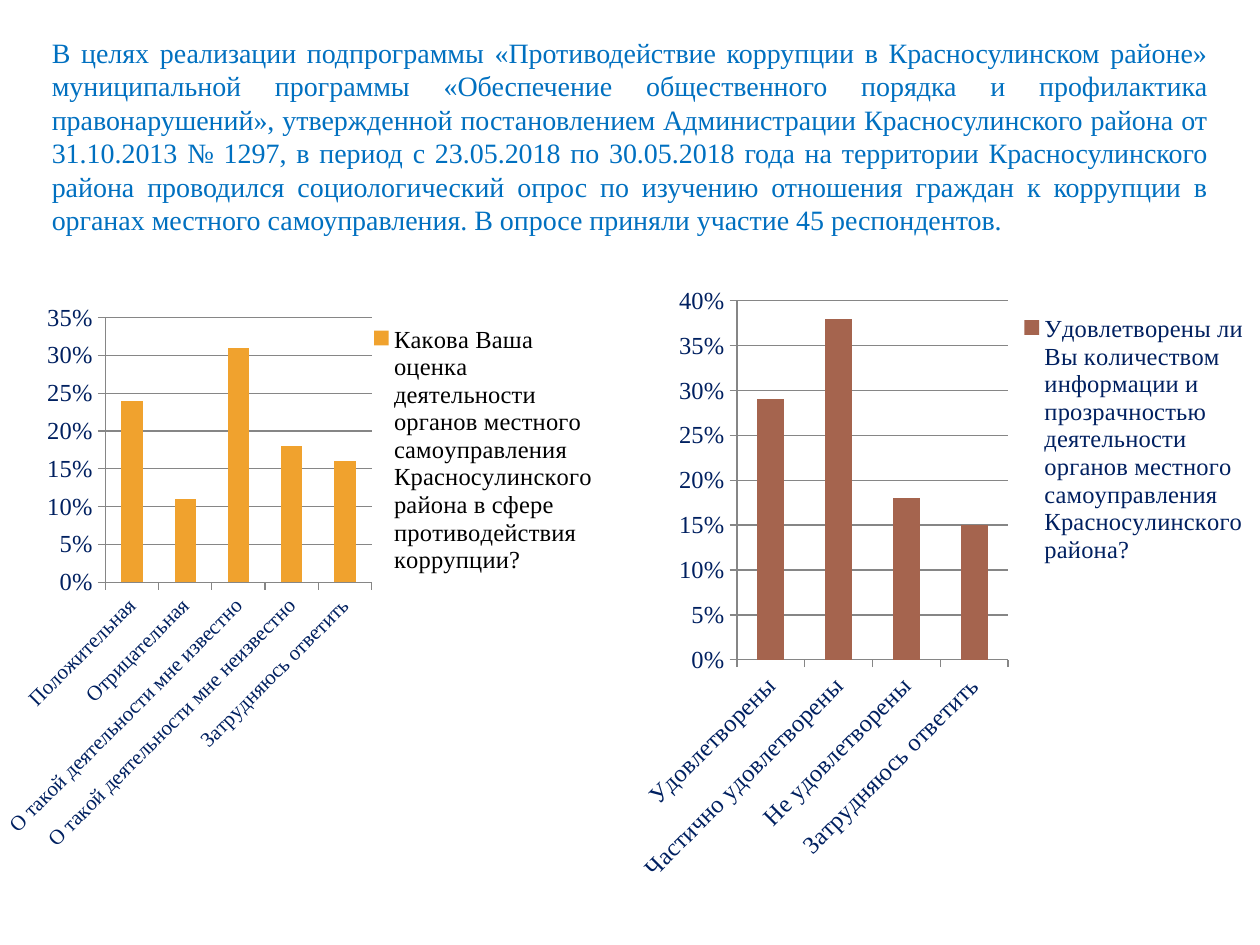
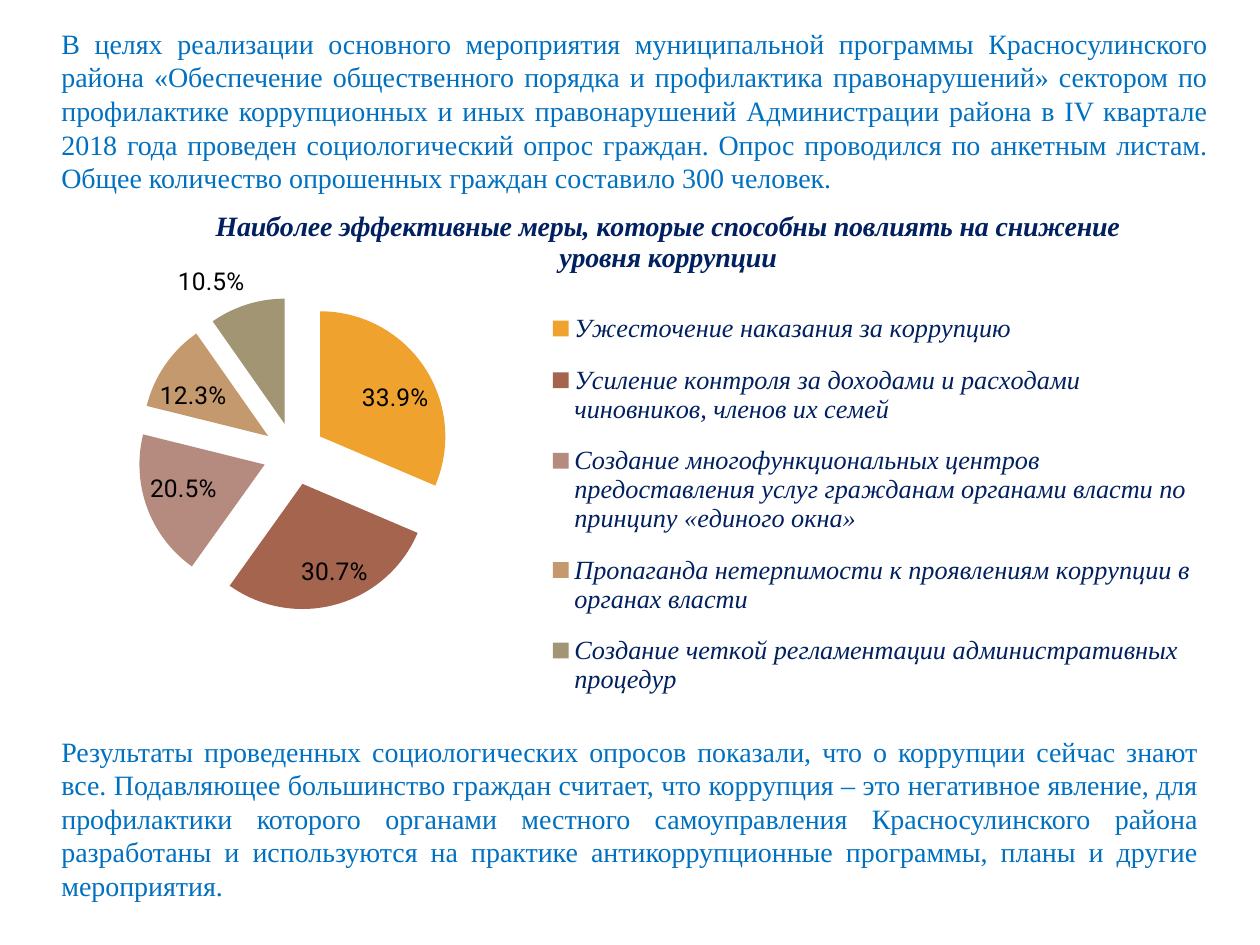
from pptx import Presentation
from pptx.chart.data import CategoryChartData
from pptx.dml.color import RGBColor
from pptx.enum import chart as ec, text as et
from pptx.oxml import parse_xml
from pptx.oxml.ns import nsdecls, qn
from pptx.util import Pt

BLUE = RGBColor(0x00, 0x70, 0xC0)
NAVY = RGBColor(0x00, 0x20, 0x60)
BLACK = RGBColor(0x00, 0x00, 0x00)
GREY = RGBColor(0x86, 0x86, 0x86)
AMBER = RGBColor(0xF0, 0xA2, 0x2E)
RUST = RGBColor(0xA5, 0x64, 0x4E)
ROSE = RGBColor(0xB5, 0x8B, 0x80)
TAN = RGBColor(0xC3, 0x99, 0x6D)
OLIVE = RGBColor(0xA1, 0x95, 0x74)
SERIF, SANS = "Times New Roman", "Roboto"

GOALS = (
    "В целях реализации подпрограммы «Противодействие коррупции в Красносулинском "
    "районе» муниципальной программы «Обеспечение общественного порядка и "
    "профилактика правонарушений», утвержденной постановлением Администрации "
    "Красносулинского района от 31.10.2013 № 1297, в период с 23.05.2018 по "
    "30.05.2018 года на территории Красносулинского района проводился "
    "социологический опрос по изучению отношения граждан к коррупции в органах "
    "местного самоуправления. В опросе приняли участие 45 респондентов.")
SURVEY = (
    "В целях реализации основного мероприятия муниципальной программы "
    "Красносулинского района «Обеспечение общественного порядка и профилактика "
    "правонарушений» сектором по профилактике коррупционных и иных правонарушений "
    "Администрации района в IV квартале 2018 года проведен социологический опрос "
    "граждан. Опрос проводился по анкетным листам. Общее количество опрошенных "
    "граждан составило 300 человек.")
RESULT = (
    "Результаты проведенных социологических опросов показали, что о коррупции "
    "сейчас знают все. Подавляющее большинство граждан считает, что коррупция – это "
    "негативное явление, для профилактики которого органами местного самоуправления "
    "Красносулинского района разработаны и используются на практике "
    "антикоррупционные программы, планы и другие мероприятия.")

RATING = (
    "Какова Ваша оценка деятельности органов местного самоуправления "
    "Красносулинского района в сфере противодействия коррупции?",
    {"Положительная": 0.24,
     "Отрицательная": 0.11,
     "О такой деятельности мне известно": 0.31,
     "О такой деятельности мне неизвестно": 0.18,
     "Затрудняюсь ответить": 0.16})
OPENNESS = (
    "Удовлетворены ли Вы количеством информации и прозрачностью деятельности "
    "органов местного самоуправления Красносулинского района?",
    {"Удовлетворены": 0.29,
     "Частично удовлетворены": 0.38,
     "Не удовлетворены": 0.18,
     "Затрудняюсь ответить": 0.15})
MEASURES = (
    "Наиболее эффективные меры, которые способны повлиять на снижение "
    "уровня коррупции",
    {"Ужесточение наказания за коррупцию": 0.339,
     "Усиление контроля за доходами и расходами чиновников, членов их семей": 0.307,
     "Создание многофункциональных центров предоставления услуг гражданам "
     "органами власти по принципу «единого окна»": 0.205,
     "Пропаганда нетерпимости к проявлениям коррупции в органах власти": 0.123,
     "Создание четкой регламентации административных процедур": 0.105})


def style(font, size, color=NAVY, name=SERIF, bold=False, italic=False):
    font.size, font.name = Pt(size), name
    font.bold, font.italic = bold, italic
    font.color.rgb = color


def fill(fmt, color):
    fmt.fill.solid()
    fmt.fill.fore_color.rgb = color


def place(node, index, spot, inner=False):
    """Set a manual layout, in shares of the chart's box."""
    for old in node.findall(qn("c:layout")):
        node.remove(old)
    parts = '<c:layoutTarget val="inner"/>' if inner else ""
    keys = ("x", "y", "w", "h")[:len(spot)]
    parts += "".join(f'<c:{k}Mode val="edge"/>' for k in keys[:2])
    parts += "".join(f'<c:{k} val="{v}"/>' for k, v in zip(keys, spot))
    node.insert(index, parse_xml(
        f'<c:layout {nsdecls("c")}><c:manualLayout>{parts}</c:manualLayout></c:layout>'))


def prose(slide, box, words):
    """Justified blue paragraph."""
    shape = slide.shapes.add_textbox(*map(Pt, box))
    frame = shape.text_frame
    frame.word_wrap = True
    frame.auto_size = et.MSO_AUTO_SIZE.SHAPE_TO_FIT_TEXT
    para = frame.paragraphs[0]
    para.alignment = et.PP_ALIGN.JUSTIFY
    run = para.add_run()
    run.text = words
    style(run.font, 16, BLUE)


def graph(slide, box, kind, poll, form, plot, key):
    """Chart with its legend, shared by columns and pie."""
    name, shares = poll
    data = CategoryChartData(number_format=form)
    data.categories = list(shares)
    data.add_series(name, list(shares.values()))
    chart = slide.shapes.add_chart(kind, *map(Pt, box), data).chart
    style(chart.font, 18, BLACK, SANS)
    chart.has_title = False
    chart.has_legend = True
    chart.legend.position = ec.XL_LEGEND_POSITION.RIGHT
    chart.legend.include_in_layout = False
    place(chart.legend._element, 1, key)
    place(chart._chartSpace.chart.plotArea, 0, plot, inner=True)
    return chart


def columns(slide, box, poll, color, plot, key, ink, size, top):
    chart = graph(slide, box, ec.XL_CHART_TYPE.COLUMN_CLUSTERED, poll, "0%", plot, key)
    style(chart.legend.font, 14, ink)
    bars = chart.plots[0]
    bars.vary_by_categories = False
    bars.gap_width = 150
    fill(bars.series[0].format, color)
    # Axes
    cats, vals = chart.category_axis, chart.value_axis
    for axis, points in ((cats, size), (vals, 14)):
        style(axis.tick_labels.font, points)
        axis.major_tick_mark = ec.XL_TICK_MARK.OUTSIDE
        axis.minor_tick_mark = ec.XL_TICK_MARK.NONE
        axis.format.line.color.rgb = GREY
    cats._element.find(qn("c:txPr")).find(qn("a:bodyPr")).set("rot", "-2700000")
    vals.minimum_scale, vals.maximum_scale, vals.major_unit = 0, top, 0.05
    vals.tick_labels.number_format = "0%"
    vals.tick_labels.number_format_is_linked = False
    vals.has_major_gridlines = True
    vals.major_gridlines.format.line.color.rgb = GREY


def pie(slide, box, poll):
    chart = graph(slide, box, ec.XL_CHART_TYPE.PIE, poll, "0.0%",
                  (0.02, 0.17, 0.42, 0.53), (0.44, 0.16, 0.55, 0.72))
    style(chart.legend.font, 15, italic=True)
    # Title
    chart.has_title = True
    run = chart.chart_title.text_frame.paragraphs[0].add_run()
    run.text = poll[0]
    style(run.font, 16, bold=True, italic=True)
    chart.chart_title.include_in_layout = False
    place(chart.chart_title._element, 1, (0.16, 0.01))
    # Slices
    plot = chart.plots[0]
    plot.vary_by_categories = True
    series = plot.series[0]
    for i, color in enumerate((AMBER, RUST, ROSE, TAN, OLIVE)):
        fill(series.points[i].format, color)
    series._element.find(qn("c:dPt")).addprevious(
        parse_xml(f'<c:explosion {nsdecls("c")} val="25"/>'))
    # Labels
    labels = series.data_labels
    labels.show_value = True
    labels.show_percentage = False
    labels.number_format = "0.0%"
    labels.number_format_is_linked = False
    labels.position = ec.XL_LABEL_POSITION.BEST_FIT
    style(labels.font, 14, BLACK, SANS)


def polls(slide):
    """Slide with two column charts."""
    prose(slide, (22.5, 16.5, 675, 124), GOALS)
    columns(slide, (0, 163.5, 354, 360), RATING, AMBER, (0.17, 0.05, 0.43, 0.42),
            (0.59, 0.05, 0.38, 0.42), BLACK, 12, 0.35)
    columns(slide, (360, 157.5, 360, 360), OPENNESS, RUST, (0.17, 0.04, 0.43, 0.57),
            (0.61, 0.05, 0.38, 0.42), NAVY, 14, 0.4)


def remedies(slide):
    """Slide with the pie between two paragraphs."""
    prose(slide, (28, 11.5, 669.5, 104.5), SURVEY)
    pie(slide, (11.5, 112.5, 680.5, 337.5), MEASURES)
    prose(slide, (28, 416, 664, 104.5), RESULT)


def main():
    deck = Presentation()
    deck.slide_width, deck.slide_height = Pt(720), Pt(540)
    for build in (polls, remedies):
        build(deck.slides.add_slide(deck.slide_layouts[6]))
    deck.save("out.pptx")


if __name__ == "__main__":
    main()
